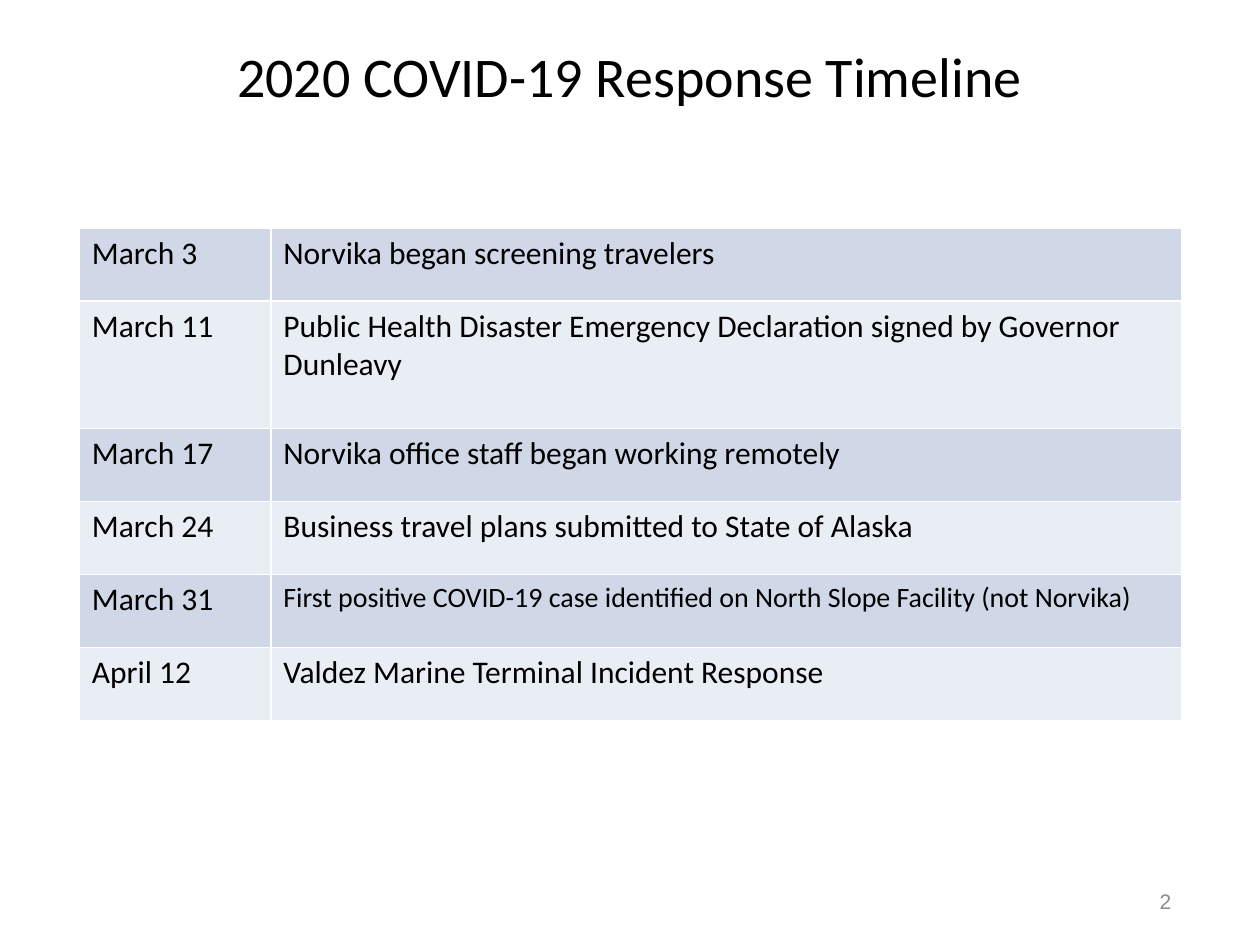
from pptx import Presentation
from pptx.dml.color import RGBColor
from pptx.enum.shapes import MSO_SHAPE
from pptx.enum.text import MSO_ANCHOR, PP_ALIGN
from pptx.util import Inches, Pt

RECT = MSO_SHAPE.RECTANGLE
MIDDLE = MSO_ANCHOR.MIDDLE
CENTER = PP_ALIGN.CENTER

TITLE = "2020 COVID-19 Response Timeline"
NUMBER = "2"
EVENTS = [
    # date, event, row height, event text size
    ("March 3", "Norvika began screening travelers", 0.58, 18),
    ("March 11", "Public Health Disaster Emergency Declaration signed by "
     "Governor Dunleavy", 1.01, 18),
    ("March 17", "Norvika office staff began working remotely", 0.58, 18),
    ("March 24", "Business travel plans submitted to State of Alaska", 0.58, 18),
    ("March 31", "First positive COVID-19 case identified on North Slope "
     "Facility (not Norvika)", 0.58, 16),
    ("April 12", "Valdez Marine Terminal Incident Response", 0.58, 18),
]
WIDTHS = [1.52, 7.23]
BANDS = ["D0D8E8", "E9EDF4"]


def paint(fill, color):
    fill.solid()
    fill.fore_color.rgb = RGBColor.from_string(color)


def write(frame, text, size, font="Calibri", color="000000", align=None):
    frame.word_wrap = True
    para = frame.paragraphs[0]
    para.text = text
    para.alignment = align
    para.font.size = Pt(size)
    para.font.name = font
    para.font.color.rgb = RGBColor.from_string(color)


deck = Presentation()
deck.slide_width, deck.slide_height = Inches(10), Inches(7.5)
slide = deck.slides.add_slide(deck.slide_layouts[6])
shapes = slide.shapes

title = shapes.add_textbox(Inches(0.5), Inches(0.2), Inches(9), Inches(0.8))
title.text_frame.vertical_anchor = MIDDLE
write(title.text_frame, TITLE, 32, align=CENTER)

number = shapes.add_shape(RECT, Inches(9), Inches(6.95), Inches(0.5), Inches(0.4))
number.shadow.inherit = False
paint(number.fill, "FFFFFF")
number.line.fill.background()
number.text_frame.vertical_anchor = MIDDLE
write(number.text_frame, NUMBER, 12, "Arial", "8C8C8C", CENTER)

height = sum(event[2] for event in EVENTS)
table = shapes.add_table(len(EVENTS), len(WIDTHS), Inches(0.63), Inches(1.81),
                         Inches(sum(WIDTHS)), Inches(height)).table
table.first_row = False
for col, width in zip(table.columns, WIDTHS):
    col.width = Inches(width)
for i, (date, event, tall, size) in enumerate(EVENTS):
    row = table.rows[i]
    row.height = Inches(tall)
    for cell, text, points in zip(row.cells, (date, event), (18, size)):
        paint(cell.fill, BANDS[i % 2])
        write(cell.text_frame, text, points)

deck.save("out.pptx")
